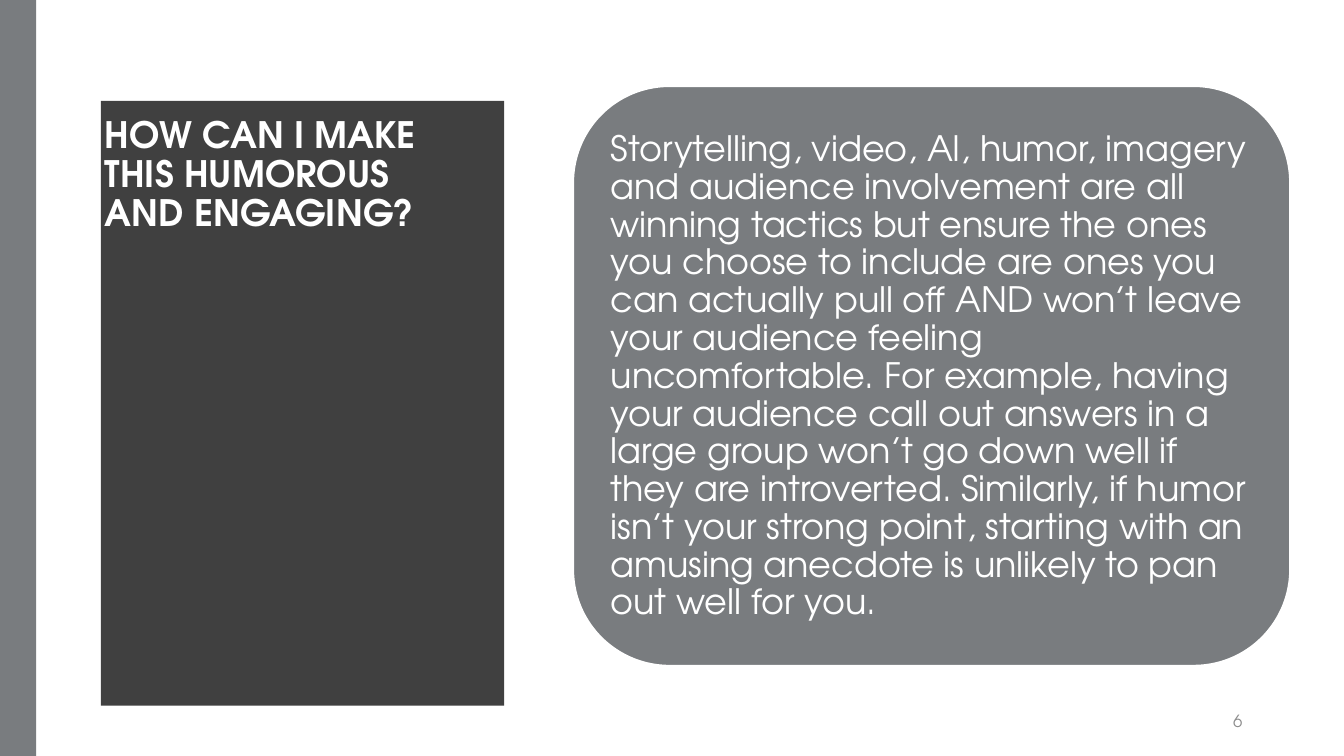
from pptx import Presentation
from pptx import util as u
from pptx.dml import color
from pptx.enum import shapes, text

FONT = "TeX Gyre Adventor"
GRAY, DARK, WHITE, PALE = "797C7F", "404040", "FFFFFF", "8C8C8C"
TITLE = "HOW CAN I MAKE THIS HUMOROUS AND ENGAGING?"
ADVICE = (
    "Storytelling, video, AI, humor, imagery and audience involvement are all "
    "winning tactics but ensure the ones you choose to include are ones you can "
    "actually pull off AND won’t leave your audience feeling uncomfortable. "
    "For example, having your audience call out answers in a large group won’t "
    "go down well if they are introverted. Similarly, if humor isn’t your strong "
    "point, starting with an amusing anecdote is unlikely to pan out well for you."
)


def rgb(code):
    return color.RGBColor.from_string(code)


class Deck:
    """Holds the style and the current slide, and draws each kind of element."""

    def __init__(self, wide, high):
        self.show = Presentation()
        self.show.slide_width = u.Inches(wide)
        self.show.slide_height = u.Inches(high)
        self.slide = self.show.slides.add_slide(self.show.slide_layouts[5])

    def paint(self, shape, fill, line=None):
        shape.shadow.inherit = False
        shape.fill.solid()
        shape.fill.fore_color.rgb = rgb(fill)
        if line:
            shape.line.color.rgb = rgb(line)
            shape.line.width = u.Pt(2)
        else:
            shape.line.fill.background()

    def block(self, kind, box, fill, line=None):
        shape = self.slide.shapes.add_shape(kind, *map(u.Inches, box))
        self.paint(shape, fill, line)

    def panel(self, left, top, right, base, bulge, fill, steps=48):
        mid, half = (top + base) / 2, (base - top) / 2
        edge = []
        for step in range(steps + 1):
            part = 2 * step / steps - 1
            edge.append((right + bulge * (1 - part ** 2), mid + half * part))
        form = self.slide.shapes.build_freeform(left, top, scale=u.Inches(1))
        form.add_line_segments(edge + [(left, base)], close=True)
        self.paint(form.convert_to_shape(), fill)

    def letter(self, shape, words, size, tint, anchor, align, space=None, bold=False, inset=0.05):
        frame = shape.text_frame
        frame.text = words
        frame.word_wrap = True
        frame.auto_size = text.MSO_AUTO_SIZE.NONE
        frame.vertical_anchor = anchor
        frame.margin_left = frame.margin_right = u.Inches(0.1)
        frame.margin_top = frame.margin_bottom = u.Inches(inset)
        para = frame.paragraphs[0]
        para.alignment = align
        para.line_spacing = space
        para.font.name = FONT
        para.font.size = u.Pt(size)
        para.font.bold = bold
        para.font.color.rgb = rgb(tint)

    def title(self, box, words, **style):
        shape = self.slide.shapes.title
        shape.left, shape.top, shape.width, shape.height = map(u.Inches, box)
        self.letter(shape, words, **style)

    def label(self, box, words, **style):
        self.letter(self.slide.shapes.add_textbox(*map(u.Inches, box)), words, **style)


def main():
    kinds, anchors, aligns = shapes.MSO_SHAPE, text.MSO_ANCHOR, text.PP_ALIGN
    deck = Deck(13.33, 7.5)
    deck.block(kinds.RECTANGLE, (0, 0, 0.36, 7.5), GRAY)
    deck.panel(0.53, 0.52, 5.08, 6.96, 0.24, DARK)
    deck.title((0.94, 1.11, 3.74, 5.24), TITLE, size=26, tint=WHITE,
               anchor=anchors.TOP, align=aligns.LEFT, space=0.9, bold=True)
    tree = deck.slide.shapes.title.element.getparent()
    tree.append(deck.slide.shapes.title.element)
    deck.label((11.73, 6.95, 0.69, 0.4), "6", size=12, tint=PALE,
               anchor=anchors.MIDDLE, align=aligns.RIGHT)
    deck.block(kinds.ROUNDED_RECTANGLE, (5.68, 0.85, 7.12, 5.76), GRAY, WHITE)
    deck.label((5.96, 1.14, 6.56, 5.2), ADVICE, size=25, tint=WHITE,
               anchor=anchors.MIDDLE, align=aligns.LEFT, space=0.9, inset=0.1)
    deck.show.save("out.pptx")


if __name__ == "__main__":
    main()
